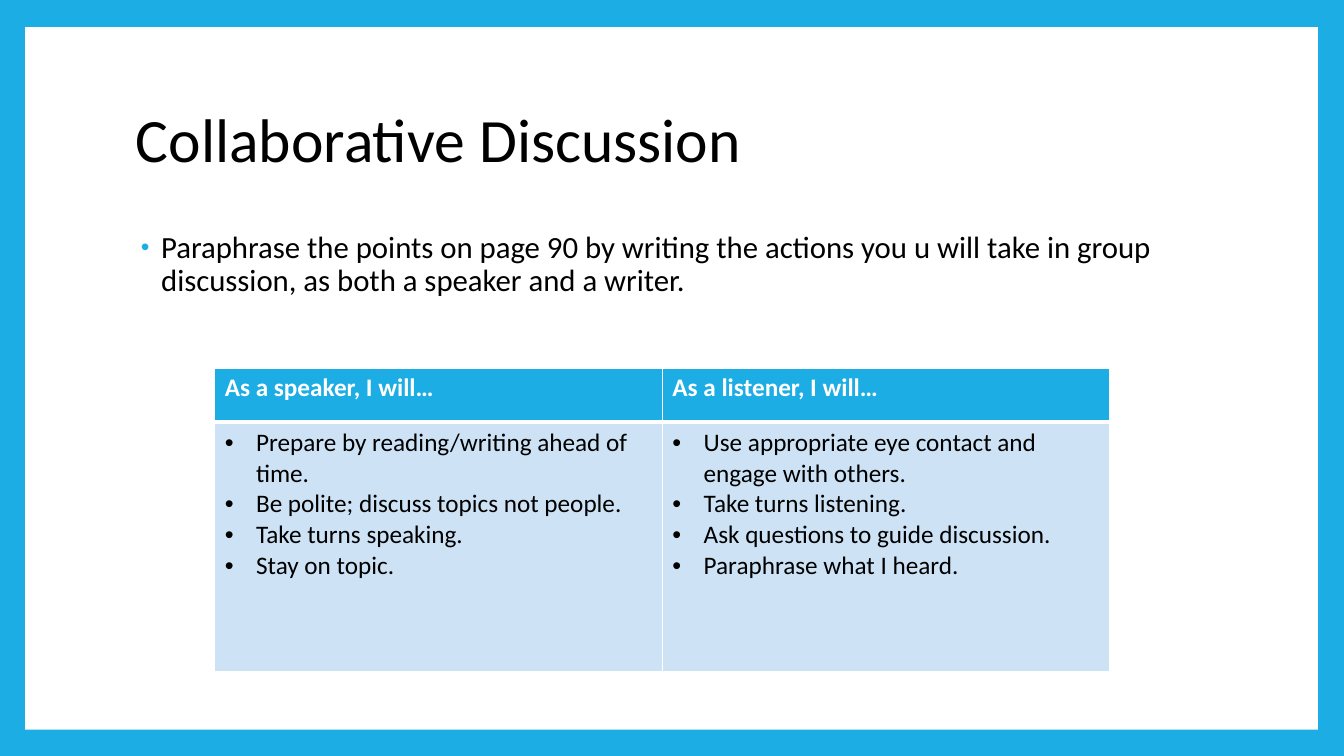
from dataclasses import dataclass

from lxml import etree
from pptx import Presentation
from pptx import util as u
from pptx.dml.color import RGBColor
from pptx.enum import shapes, text
from pptx.oxml import ns

EMU_PER_PX = 9144  # 100 px to the inch
FONT = "Calibri"
BLUE, PALE_BLUE, WHITE, BLACK = "1CADE4", "CDE3F5", "FFFFFF", "000000"


@dataclass
class Box:
    left: int
    top: int
    width: int
    height: int

    def emu(self) -> tuple:
        return tuple(px(v) for v in (self.left, self.top, self.width, self.height))


@dataclass
class Style:
    size: int
    color: str = BLACK
    bold: bool = False
    line_spacing: float = 1.0
    space_before: int = 0


@dataclass
class Bullet:
    margin: int
    hanging: int
    color: str = ""
    percent: int = 100


@dataclass
class Column:
    heading: str
    actions: list[str]


COLUMNS = [
    Column("As a speaker, I will…", [
        "Prepare by reading/writing ahead of time.",
        "Be polite; discuss topics not people.",
        "Take turns speaking.",
        "Stay on topic.",
    ]),
    Column("As a listener, I will…", [
        "Use appropriate eye contact and engage with others.",
        "Take turns listening.",
        "Ask questions to guide discussion.",
        "Paraphrase what I heard.",
    ]),
]
PANEL = Box(25, 27, 1282, 697)
TITLE = Box(125, 67, 1080, 148)
BODY = Box(125, 225, 1080, 442)
TABLE = Box(213, 365, 888, 301)
ROW_HEIGHTS = (54, 247)


def px(value: int) -> u.Emu:
    return u.Emu(value * EMU_PER_PX)


def rgb(color: str) -> RGBColor:
    return RGBColor.from_string(color)


def add_element(parent, tag: str, **attributes: str):
    return etree.SubElement(parent, ns.qn(tag), attributes)


def add_bullet(paragraph, bullet: Bullet) -> None:
    properties = paragraph._p.get_or_add_pPr()
    properties.set("marL", str(px(bullet.margin)))
    properties.set("indent", str(-px(bullet.hanging)))
    if bullet.color:
        add_element(add_element(properties, "a:buClr"), "a:srgbClr", val=bullet.color)
    add_element(properties, "a:buSzPct", val=str(bullet.percent * 1000))
    add_element(properties, "a:buFont", typeface="Arial")
    add_element(properties, "a:buChar", char="•")


def write(frame, lines: list[str], style: Style, bullet: Bullet | None = None) -> None:
    frame.word_wrap = True
    for index, line in enumerate(lines):
        paragraph = frame.add_paragraph() if index else frame.paragraphs[0]
        paragraph.text = line
        if bullet:
            add_bullet(paragraph, bullet)
        paragraph.line_spacing = style.line_spacing
        paragraph.space_before = u.Pt(style.space_before)
        paragraph.font.name = FONT
        paragraph.font.size = u.Pt(style.size)
        paragraph.font.bold = style.bold
        paragraph.font.color.rgb = rgb(style.color)


def add_text(slide, box: Box, line: str, style: Style, anchor, bullet: Bullet | None = None) -> None:
    frame = slide.shapes.add_textbox(*box.emu()).text_frame
    frame.vertical_anchor = anchor
    write(frame, [line], style, bullet)


def format_cell(cell, fill: str, top: int, bottom: int) -> None:
    properties = cell._tc.get_or_add_tcPr()
    for side, points in (("L", 1), ("R", 1), ("T", top), ("B", bottom)):
        line = add_element(properties, f"a:ln{side}", w=str(u.Pt(points)))
        add_element(add_element(line, "a:solidFill"), "a:srgbClr", val=WHITE)
    cell.fill.solid()
    cell.fill.fore_color.rgb = rgb(fill)


def add_action_table(slide) -> None:
    table = slide.shapes.add_table(len(ROW_HEIGHTS), len(COLUMNS), *TABLE.emu()).table
    table.horz_banding = False
    for row, height in zip(table.rows, ROW_HEIGHTS):
        row.height = px(height)
    for index, column in enumerate(COLUMNS):
        table.columns[index].width = px(TABLE.width // len(COLUMNS))
        heading, actions = table.cell(0, index), table.cell(1, index)
        format_cell(heading, BLUE, top=1, bottom=3)
        format_cell(actions, PALE_BLUE, top=3, bottom=1)
        write(heading.text_frame, [column.heading], Style(18, WHITE, bold=True))
        write(actions.text_frame, column.actions, Style(18), Bullet(31, 31))


def main() -> None:
    presentation = Presentation()
    presentation.slide_width, presentation.slide_height = px(1333), px(750)
    slide = presentation.slides.add_slide(presentation.slide_layouts[6])

    # Blue frame around a white panel
    slide.background.fill.solid()
    slide.background.fill.fore_color.rgb = rgb(BLUE)
    panel = slide.shapes.add_shape(shapes.MSO_SHAPE.RECTANGLE, *PANEL.emu())
    panel.shadow.inherit = False
    panel.fill.solid()
    panel.fill.fore_color.rgb = rgb(WHITE)
    panel.line.fill.background()

    # Title and task
    add_text(slide, TITLE, "Collaborative Discussion",
             Style(44, line_spacing=0.9), text.MSO_ANCHOR.MIDDLE)
    add_text(slide, BODY,
             "Paraphrase the points on page 90 by writing the actions you u will take "
             "in group discussion, as both a speaker and a writer.",
             Style(22, line_spacing=0.9, space_before=14), text.MSO_ANCHOR.TOP,
             Bullet(25, 20, BLUE, 80))

    # Speaker and listener actions
    add_action_table(slide)
    presentation.save("out.pptx")


if __name__ == "__main__":
    main()
